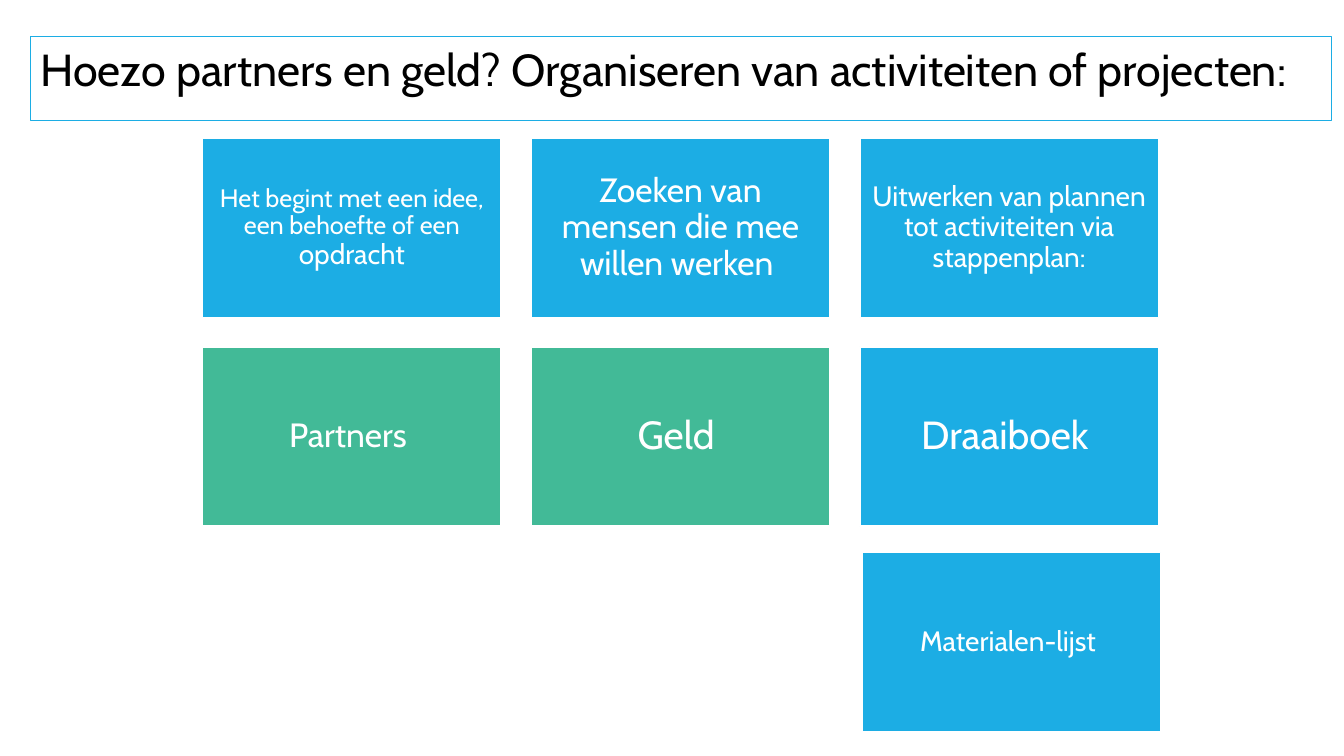
from dataclasses import dataclass

import pptx
import pptx.dml.color
import pptx.enum.shapes
import pptx.enum.text
import pptx.util

PX = 9144  # EMU, 100 px to the inch
SLIDE_W, SLIDE_H = 1333, 750
CARD_W, CARD_H = 296, 178
GRID_X, GRID_Y = 201, 137
STEP_X, STEP_Y = 326, 207


@dataclass(frozen=True)
class Theme:
    font: str = "Cabin"
    blue: str = "1CADE4"
    green: str = "42BA97"
    white: str = "FFFFFF"
    black: str = "000000"
    title: int = 32
    large: int = 28
    medium: int = 24
    small: int = 20
    tiny: int = 18


THEME = Theme()


@dataclass(frozen=True)
class Run:
    text: str
    size: int


@dataclass(frozen=True)
class Card:
    x: int
    y: int
    fill: str
    inset: int
    runs: tuple[Run, ...]


def grid_card(col: int, row: int, fill: str, inset: int, *runs: Run) -> Card:
    return Card(GRID_X + col * STEP_X, GRID_Y + row * STEP_Y, fill, inset, runs)


CARDS = (
    grid_card(0, 0, THEME.blue, 7,
              Run("Het begint met een idee, een behoefte of een ", THEME.tiny),
              Run("opdracht", THEME.small)),
    grid_card(1, 0, THEME.blue, 10,
              Run("Zoeken van mensen die mee willen werken ", THEME.medium)),
    grid_card(2, 0, THEME.blue, 8,
              Run("Uitwerken van plannen tot activiteiten via stappenplan:", THEME.small)),
    grid_card(0, 1, THEME.green, 10, Run("Partners ", THEME.medium)),
    grid_card(1, 1, THEME.green, 12, Run("Geld ", THEME.large)),
    grid_card(2, 1, THEME.blue, 12, Run("Draaiboek ", THEME.large)),
    Card(855, 548, THEME.blue, 8, (Run("Materialen-lijst ", THEME.small),)),
)


def px(n: int) -> pptx.util.Emu:
    return pptx.util.Emu(n * PX)


def rgb(value: str) -> pptx.dml.color.RGBColor:
    return pptx.dml.color.RGBColor.from_string(value)


def apply(target: object, values: dict) -> None:
    for name, value in values.items():
        setattr(target, name, value)


def paint(sp, fill: str, line: str, width: float) -> None:
    sp.fill.solid()
    sp.fill.fore_color.rgb = rgb(fill)
    sp.line.color.rgb = rgb(line)
    sp.line.width = pptx.util.Pt(width)


def add_run(p, run: Run, color: str) -> None:
    r = p.add_run()
    r.text = run.text
    apply(r.font, {"name": THEME.font, "size": pptx.util.Pt(run.size)})
    r.font.color.rgb = rgb(color)


def add_card(slide, card: Card) -> None:
    sp = slide.shapes.add_shape(pptx.enum.shapes.MSO_SHAPE.RECTANGLE,
                                px(card.x), px(card.y), px(CARD_W), px(CARD_H))
    sp.shadow.inherit = False
    paint(sp, card.fill, THEME.white, 1.25)
    tf = sp.text_frame
    apply(tf, {"word_wrap": True,
               "vertical_anchor": pptx.enum.text.MSO_ANCHOR.MIDDLE})
    apply(tf, {f"margin_{side}": px(card.inset)
               for side in ("left", "top", "right", "bottom")})
    p = tf.paragraphs[0]
    apply(p, {"alignment": pptx.enum.text.PP_ALIGN.CENTER, "line_spacing": 0.9})
    for run in card.runs:
        add_run(p, run, THEME.white)


def set_title(slide, text: str) -> None:
    sp = slide.shapes.title
    apply(sp, {"left": px(30), "top": px(36), "width": px(1291), "height": px(64)})
    paint(sp, THEME.white, THEME.blue, 0.75)
    tf = sp.text_frame
    apply(tf, {"word_wrap": True,
               "auto_size": pptx.enum.text.MSO_AUTO_SIZE.SHAPE_TO_FIT_TEXT,
               "vertical_anchor": pptx.enum.text.MSO_ANCHOR.TOP})
    p = tf.paragraphs[0]
    p.alignment = pptx.enum.text.PP_ALIGN.LEFT
    add_run(p, Run(text, THEME.title), THEME.black)


def main() -> None:
    prs = pptx.Presentation()
    apply(prs, {"slide_width": px(SLIDE_W), "slide_height": px(SLIDE_H)})
    slide = prs.slides.add_slide(prs.slide_layouts.get_by_name("Title Only"))
    for card in CARDS:
        add_card(slide, card)
    set_title(slide, "Hoezo partners en geld? Organiseren van activiteiten of projecten:")
    prs.save("out.pptx")


if __name__ == "__main__":
    main()
